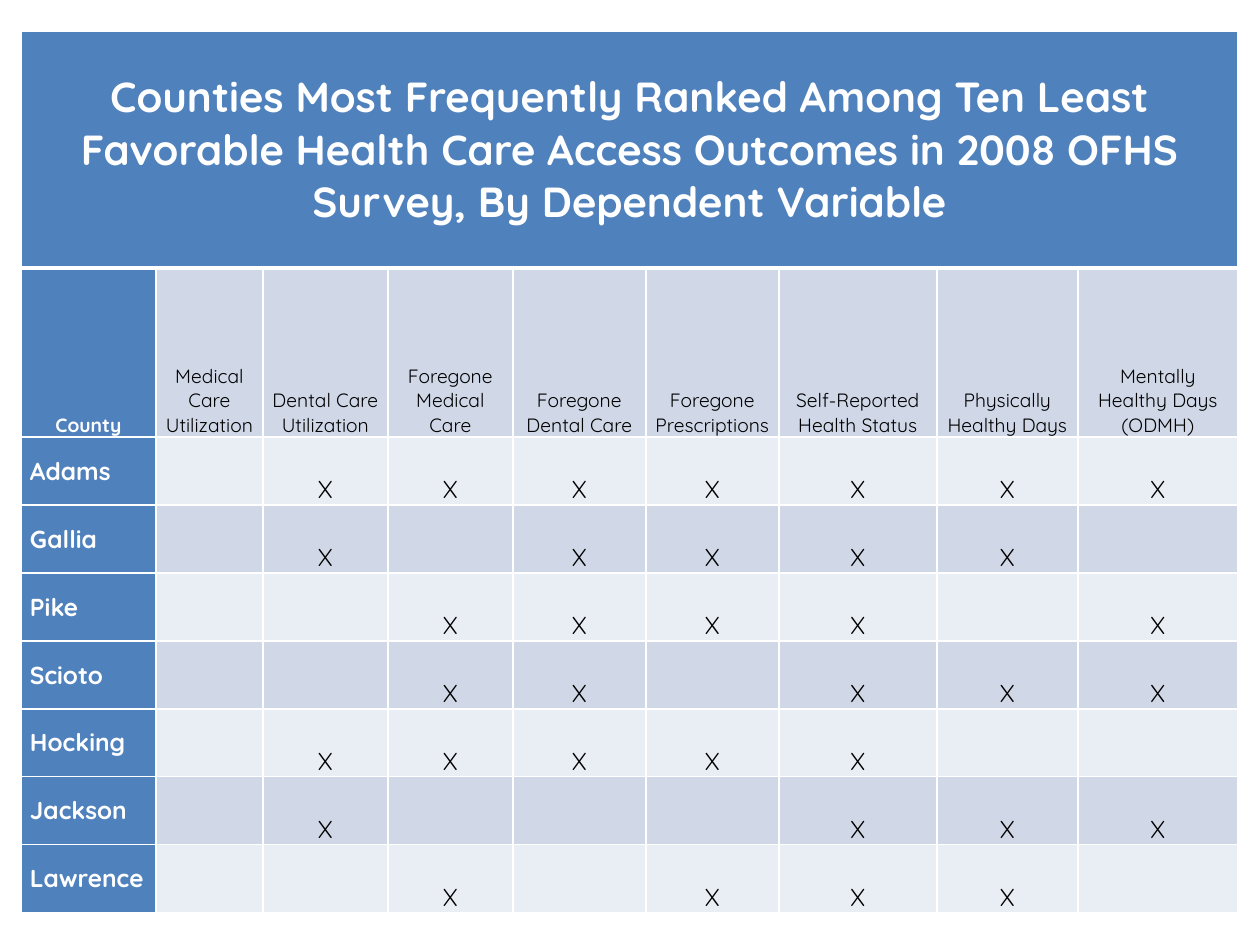
import pptx
import pptx.util
import pptx.dml.color
import pptx.enum.text
import pptx.oxml
import pptx.oxml.ns

PX = 914400 / 126
WHITE = pptx.dml.color.RGBColor(0xFF, 0xFF, 0xFF)
BLACK = pptx.dml.color.RGBColor(0x00, 0x00, 0x00)
BLUE = pptx.dml.color.RGBColor(0x4F, 0x81, 0xBD)
BAND_DARK = pptx.dml.color.RGBColor(0xD0, 0xD8, 0xE8)
BAND_LIGHT = pptx.dml.color.RGBColor(0xE9, 0xED, 0xF4)

LEFT = pptx.enum.text.PP_ALIGN.LEFT
CENTER = pptx.enum.text.PP_ALIGN.CENTER
MIDDLE = pptx.enum.text.MSO_ANCHOR.MIDDLE
BOTTOM = pptx.enum.text.MSO_ANCHOR.BOTTOM

TITLE = ("Counties Most Frequently Ranked Among Ten Least Favorable "
         "Health Care Access Outcomes in 2008 OFHS Survey, By Dependent Variable")
HEADINGS = ["County", "Medical Care Utilization", "Dental Care Utilization",
            "Foregone Medical Care", "Foregone Dental Care",
            "Foregone Prescriptions", "Self-Reported Health Status",
            "Physically Healthy Days", "Mentally Healthy Days (ODMH)"]
# One character per outcome, in the order of HEADINGS
COUNTY_MARKS = {
    "Adams": "-XXXXXXX",
    "Gallia": "-X-XXXX-",
    "Pike": "--XXXX-X",
    "Scioto": "--XX-XXX",
    "Hocking": "-XXXXX--",
    "Jackson": "-X---XXX",
    "Lawrence": "--X-XXX-",
}

COLUMN_WIDTHS = [135, 107, 125, 125, 133, 133, 158, 141, 160]
TITLE_HEIGHT, HEADING_HEIGHT, COUNTY_HEIGHT = 237, 169, 68
CELL_MARGINS = {"margin_left": 9, "margin_right": 9,
                "margin_top": 0, "margin_bottom": 0}


def px(length):
    return pptx.util.Emu(round(length * PX))


def set_borders(cell, **widths):
    """Draw white borders, 1 pt unless a side (L, R, T, B) is given a width."""
    properties = cell._tc.get_or_add_tcPr()
    for side in "LRTB":
        width = pptx.util.Pt(widths.get(side, 1))
        properties.append(pptx.oxml.parse_xml(
            f'<a:ln{side} {pptx.oxml.ns.nsdecls("a")} w="{width}"><a:solidFill>'
            f'<a:srgbClr val="{WHITE}"/></a:solidFill></a:ln{side}>'))


def fill_cell(cell, text, fill, size, color=BLACK, bold=False,
              align=CENTER, anchor=BOTTOM):
    for margin, length in CELL_MARGINS.items():
        setattr(cell, margin, px(length))
    cell.vertical_anchor = anchor
    cell.fill.solid()
    cell.fill.fore_color.rgb = fill
    paragraph = cell.text_frame.paragraphs[0]
    paragraph.alignment = align
    if text:
        run = paragraph.add_run()
        run.text = text
        font_format = {"name": "Quicksand", "size": pptx.util.Pt(size), "bold": bold}
        for attribute, value in font_format.items():
            setattr(run.font, attribute, value)
        run.font.color.rgb = color


def add_title_row(table):
    for cell in table.rows[0].cells:
        set_borders(cell, B=3)
    title = table.cell(0, 0)
    title.merge(table.cell(0, len(HEADINGS) - 1))
    fill_cell(title, TITLE, BLUE, 24, WHITE, True, anchor=MIDDLE)


def add_heading_row(table):
    for column, heading in enumerate(HEADINGS):
        cell = table.cell(1, column)
        set_borders(cell, T=3)
        if column == 0:
            fill_cell(cell, heading, BLUE, 11, WHITE, True)
        else:
            fill_cell(cell, heading, BAND_DARK, 11)


def add_county_row(table, row, county, marks):
    band = BAND_DARK if row % 2 else BAND_LIGHT
    for cell in table.rows[row].cells:
        set_borders(cell)
    fill_cell(table.cell(row, 0), county, BLUE, 14, WHITE, True, LEFT, MIDDLE)
    for column, mark in enumerate(marks, start=1):
        fill_cell(table.cell(row, column), mark.strip("-"), band, 14)


def add_county_table(slide, left, top):
    heights = [TITLE_HEIGHT, HEADING_HEIGHT] + [COUNTY_HEIGHT] * len(COUNTY_MARKS)
    table = slide.shapes.add_table(
        len(heights), len(HEADINGS), px(left), px(top),
        px(sum(COLUMN_WIDTHS)), px(sum(heights))).table
    for column, width in zip(table.columns, COLUMN_WIDTHS):
        column.width = px(width)
    for row, height in zip(table.rows, heights):
        row.height = px(height)
    add_title_row(table)
    add_heading_row(table)
    for row, (county, marks) in enumerate(COUNTY_MARKS.items(), start=2):
        add_county_row(table, row, county, marks)


def main():
    presentation = pptx.Presentation()
    presentation.slide_width = px(1260)
    presentation.slide_height = px(945)
    slide = presentation.slides.add_slide(presentation.slide_layouts[6])
    add_county_table(slide, 21, 31)
    presentation.save("out.pptx")


if __name__ == "__main__":
    main()
